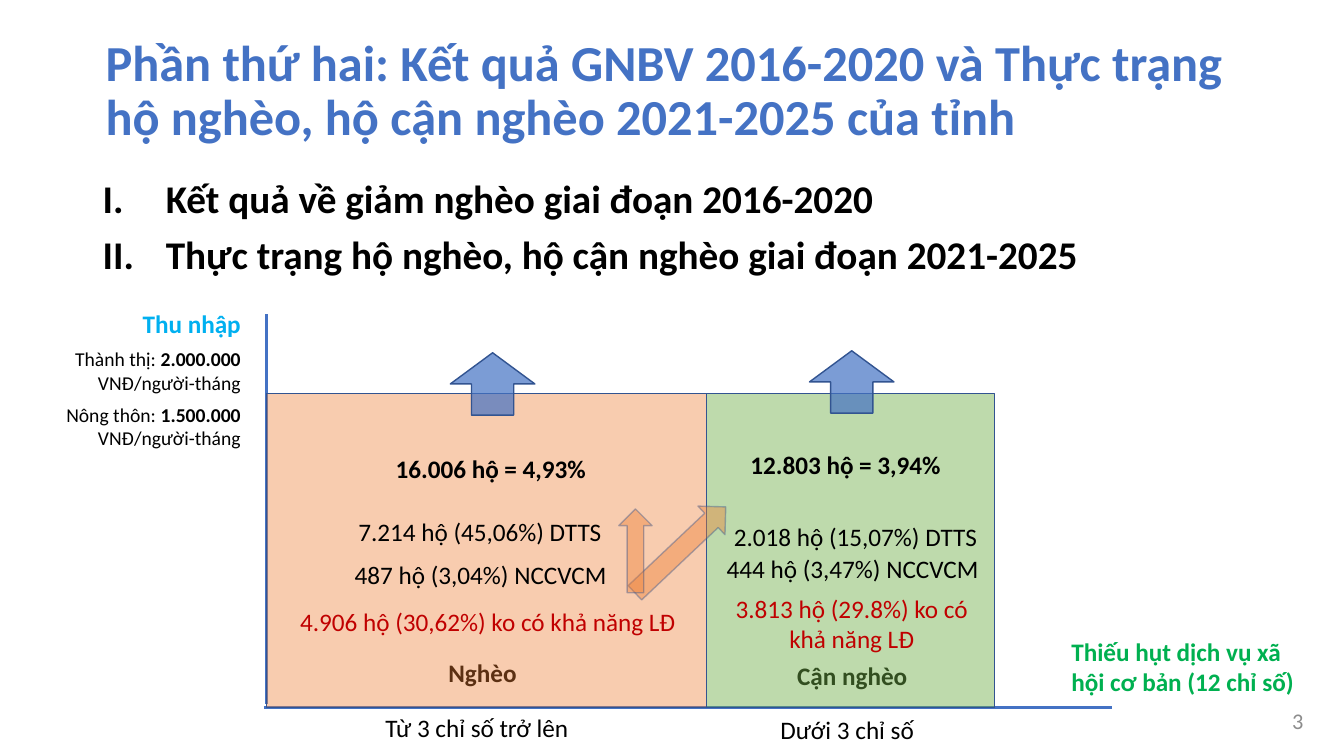
from dataclasses import dataclass

from lxml.etree import SubElement
from pptx import Presentation
from pptx.dml.color import RGBColor
from pptx.enum.shapes import MSO_CONNECTOR, MSO_SHAPE
from pptx.enum.text import MSO_ANCHOR, PP_ALIGN
from pptx.oxml.ns import qn
from pptx.slide import Slide
from pptx.text.text import TextFrame
from pptx.util import Cm, Pt

BLUE, DARK_BLUE, ORANGE, GREEN = "4472C4", "325491", "ED7D31", "70AD47"
BLACK, RED = "000000", "C00000"


@dataclass(frozen=True)
class Box:
    left: float
    top: float
    width: float
    height: float = 1.02


@dataclass(frozen=True)
class Label:
    box: Box
    text: str
    color: str = BLACK
    bold: bool = False
    align: PP_ALIGN = PP_ALIGN.CENTER


@dataclass(frozen=True)
class Block:
    kind: MSO_SHAPE
    box: Box
    color: str
    opacity: int
    rotation: float = 0
    line_opacity: int = 100


@dataclass(frozen=True)
class Axis:
    left: float
    top: float
    right: float
    bottom: float


def paint(color_format, color: str, opacity: int = 100) -> None:
    color_format.rgb = RGBColor.from_string(color)
    if opacity < 100:
        element = color_format._xFill.find(qn("a:srgbClr"))
        SubElement(element, qn("a:alpha"), val=str(opacity * 1000))


def write(paragraph, text: str, *, size: int = 18, color: str = BLACK, bold: bool = False,
          align: PP_ALIGN = PP_ALIGN.LEFT, before: int = 0, spacing: float = 1.0) -> None:
    paragraph.alignment = align
    paragraph.space_before = Pt(before)
    paragraph.line_spacing = spacing
    run = paragraph.add_run()
    run.text = text
    run.font.name = "Calibri"
    run.font.size = Pt(size)
    run.font.bold = bold
    paint(run.font.color, color)


def add_frame(slide: Slide, box: Box, anchor: MSO_ANCHOR = MSO_ANCHOR.TOP) -> TextFrame:
    shape = slide.shapes.add_textbox(Cm(box.left), Cm(box.top), Cm(box.width), Cm(box.height))
    frame = shape.text_frame
    frame.word_wrap = True
    frame.vertical_anchor = anchor
    return frame


def add_label(slide: Slide, label: Label) -> None:
    frame = add_frame(slide, label.box)
    write(frame.paragraphs[0], label.text, color=label.color, bold=label.bold, align=label.align)


def add_block(slide: Slide, block: Block) -> None:
    box = block.box
    shape = slide.shapes.add_shape(block.kind, Cm(box.left), Cm(box.top),
                                   Cm(box.width), Cm(box.height))
    shape.shadow.inherit = False
    shape.rotation = block.rotation
    shape.fill.solid()
    paint(shape.fill.fore_color, block.color, block.opacity)
    shape.line.width = Pt(1)
    shape.line.fill.solid()
    paint(shape.line.fill.fore_color, DARK_BLUE, block.line_opacity)


def add_axis(slide: Slide, axis: Axis) -> None:
    connector = slide.shapes.add_connector(MSO_CONNECTOR.STRAIGHT, Cm(axis.left), Cm(axis.top),
                                           Cm(axis.right), Cm(axis.bottom))
    connector.line.width = Pt(2)
    paint(connector.line.color, BLUE)
    SubElement(connector._element.spPr, qn("a:effectLst"))


def add_outline(slide: Slide, items: list[str]) -> None:
    frame = add_frame(slide, Box(2.34, 4.39, 29.21, 13.21))
    for index, item in enumerate(items):
        paragraph = frame.add_paragraph() if index else frame.paragraphs[0]
        write(paragraph, item, size=28, bold=True, before=10, spacing=0.9)
        properties = paragraph._p.get_or_add_pPr()
        properties.set("marL", str(Cm(1.59)))
        properties.set("indent", str(-Cm(1.59)))
        SubElement(properties, qn("a:buFont"), typeface="+mj-lt")
        SubElement(properties, qn("a:buAutoNum"), type="romanUcPeriod")


def add_income(slide: Slide, thresholds: dict[str, str]) -> None:
    frame = add_frame(slide, Box(0.58, 7.65, 5.74, 3.84))
    write(frame.paragraphs[0], "Thu nhập", color="00B0F0", bold=True, align=PP_ALIGN.RIGHT)
    for area, amount in thresholds.items():
        paragraph = frame.add_paragraph()
        for text, bold in ((f"{area}: ", False), (amount, True), (" VNĐ/người-tháng", False)):
            write(paragraph, text, size=14, bold=bold, align=PP_ALIGN.RIGHT, before=6)


AXES = [Axis(6.71, 7.92, 6.71, 17.75), Axis(6.65, 17.83, 28.02, 17.83)]

AXIS_LABELS = [
    Label(Box(26.75, 15.9, 6.32, 1.8), "Thiếu hụt dịch vụ xã hội cơ bản (12 chỉ số)",
          "00B050", True, PP_ALIGN.LEFT),
    Label(Box(11.05, 16.43, 2.97), "Nghèo", bold=True, align=PP_ALIGN.LEFT),
    Label(Box(19.84, 16.51, 3.68), "Cận nghèo", bold=True, align=PP_ALIGN.LEFT),
    Label(Box(18.19, 17.88, 6.32), "Dưới 3 chỉ số"),
    Label(Box(8.86, 17.83, 6.32), "Từ 3 chỉ số trở lên"),
]

BLOCKS = [
    Block(MSO_SHAPE.RECTANGLE, Box(6.71, 9.91, 11.1, 7.92), ORANGE, 39),
    Block(MSO_SHAPE.RECTANGLE, Box(17.81, 9.91, 7.26, 7.92), GREEN, 45),
    Block(MSO_SHAPE.UP_ARROW, Box(11.35, 8.89, 2.13, 1.57), BLUE, 70),
    Block(MSO_SHAPE.UP_ARROW, Box(20.4, 8.84, 2.13, 1.57), BLUE, 70),
    Block(MSO_SHAPE.RIGHT_ARROW, Box(15.57, 13.36, 3.15, 0.99), ORANGE, 40, 316.6, 40),
    Block(MSO_SHAPE.RIGHT_ARROW, Box(14.96, 13.46, 2.11, 0.84), ORANGE, 40, 270, 40),
]

HOUSEHOLD_LABELS = [
    Label(Box(8.28, 11.3, 8.18), "16.006 hộ = 4,93%", bold=True),
    Label(Box(6.71, 12.88, 10.77), "7.214 hộ (45,06%) DTTS"),
    Label(Box(6.73, 13.97, 10.77), "487 hộ (3,04%) NCCVCM"),
    Label(Box(6.91, 15.16, 10.77), "4.906 hộ (30,62%) ko có khả năng LĐ", RED),
    Label(Box(17.68, 11.2, 7.26), "12.803 hộ = 3,94%", bold=True),
    Label(Box(17.98, 13, 7.16), "2.018 hộ (15,07%) DTTS"),
    Label(Box(17.86, 13.82, 7.26), "444 hộ (3,47%) NCCVCM"),
    Label(Box(17.91, 14.83, 7.11, 1.8), "3.813 hộ (29.8%) ko có khả năng LĐ", RED),
]


def main() -> None:
    presentation = Presentation()
    presentation.slide_width, presentation.slide_height = Cm(33.87), Cm(19.05)
    slide = presentation.slides.add_slide(presentation.slide_layouts[6])

    title = add_frame(slide, Box(2.41, 0.05, 29.21, 4.55), MSO_ANCHOR.MIDDLE)
    write(title.paragraphs[0],
          "Phần thứ hai: Kết quả GNBV 2016-2020 và Thực trạng hộ nghèo, "
          "hộ cận nghèo 2021-2025 của tỉnh",
          size=36, color=BLUE, bold=True, spacing=0.9)
    add_outline(slide, ["Kết quả về giảm nghèo giai đoạn 2016-2020",
                        "Thực trạng hộ nghèo, hộ cận nghèo giai đoạn 2021-2025"])
    number = add_frame(slide, Box(25.48, 17.65, 7.62), MSO_ANCHOR.MIDDLE)
    write(number.paragraphs[0], "3", size=16, color="8C8C8C", align=PP_ALIGN.RIGHT)

    for axis in AXES:
        add_axis(slide, axis)
    add_income(slide, {"Thành thị": "2.000.000", "Nông thôn": "1.500.000"})
    for label in AXIS_LABELS:
        add_label(slide, label)
    for block in BLOCKS:
        add_block(slide, block)
    for label in HOUSEHOLD_LABELS:
        add_label(slide, label)

    presentation.save("out.pptx")


if __name__ == "__main__":
    main()
